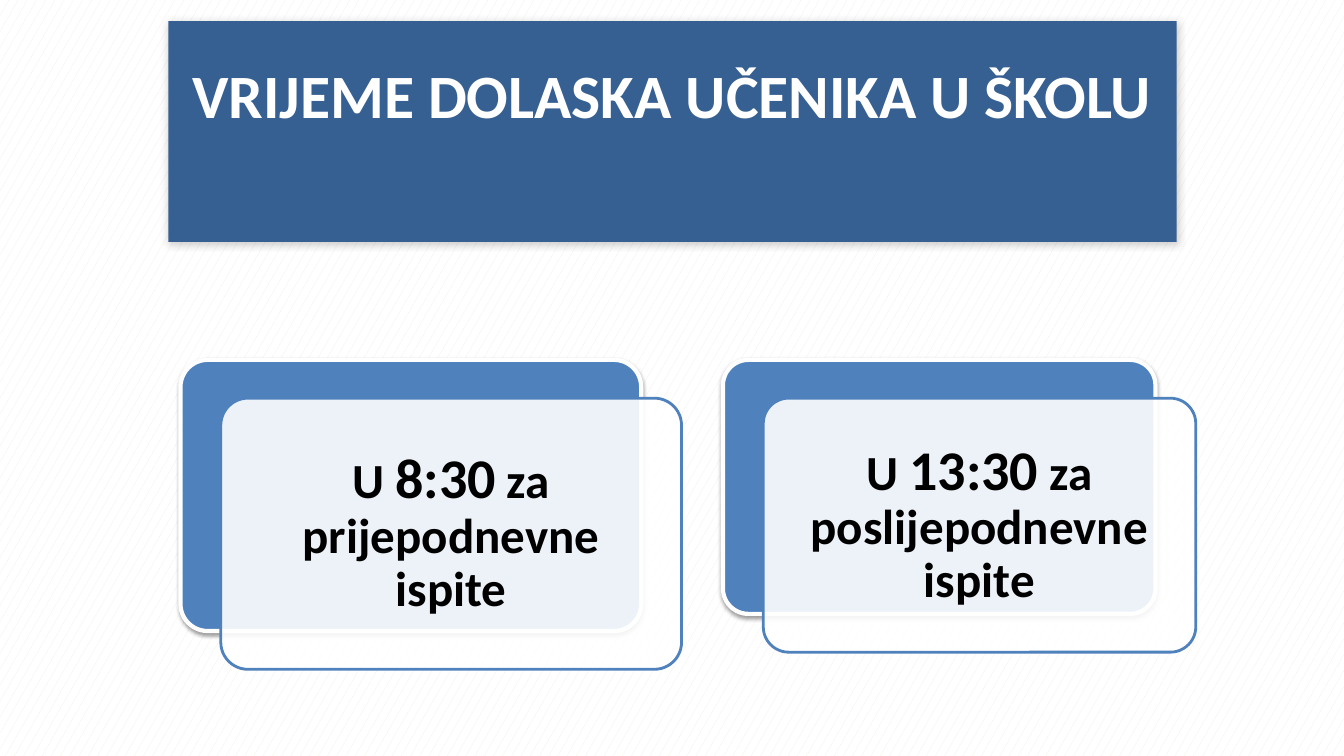
from lxml import etree
from pptx import Presentation
from pptx import util as u
from pptx.dml.color import RGBColor
from pptx.enum import dml, shapes, text
from pptx.oxml import ns

WHITE = RGBColor(0xFF, 0xFF, 0xFF)
BLACK = RGBColor(0x00, 0x00, 0x00)
CREAM = RGBColor(0xEE, 0xEC, 0xE1)
NAVY = RGBColor(0x37, 0x60, 0x92)
BLUE = RGBColor(0x4F, 0x81, 0xBD)

BANNER_SHADOW = dict(alpha=20, blur=6, dist=1, angle=45)
CARD_SHADOW = dict(alpha=38, blur=3.1, dist=1.6, angle=90)


def add_shadow(sp, alpha, blur, dist, angle):
    effects = sp._element.spPr.find(ns.qn("a:effectLst"))
    shadow = etree.SubElement(effects, ns.qn("a:outerShdw"), blurRad=str(u.Pt(blur)),
                              dist=str(u.Pt(dist)), dir=str(angle * 60000),
                              rotWithShape="0")
    color = etree.SubElement(shadow, ns.qn("a:srgbClr"), val=str(BLACK))
    etree.SubElement(color, ns.qn("a:alpha"), val=str(alpha * 1000))


def add_panel(parent, kind, box, fill, line=None, width=0, opacity=100, shadow=None):
    sp = parent.add_shape(kind, *map(u.Inches, box))
    sp.shadow.inherit = False
    sp.fill.solid()
    sp.fill.fore_color.rgb = fill
    if line is None:
        sp.line.fill.background()
    else:
        sp.line.color.rgb = line
        sp.line.width = u.Pt(width)
    if opacity < 100:
        color = sp._element.spPr.find(ns.qn("a:solidFill"))[0]
        etree.SubElement(color, ns.qn("a:alpha"), val=str(opacity * 1000))
    if shadow:
        add_shadow(sp, **shadow)
    return sp


def write_text(sp, runs, color, **frame_format):
    tf = sp.text_frame
    settings = dict(word_wrap=True, vertical_anchor=text.MSO_ANCHOR.MIDDLE)
    for name, value in {**settings, **frame_format}.items():
        setattr(tf, name, value)
    p = tf.paragraphs[0]
    p.alignment = text.PP_ALIGN.CENTER
    for words, size in runs:
        r = p.add_run()
        r.text = words
        for name, value in dict(name="Calibri", size=u.Pt(size), bold=True).items():
            setattr(r.font, name, value)
        r.font.color.rgb = color
    return p


def add_banner(slide, box, title):
    sp = add_panel(slide.shapes, shapes.MSO_SHAPE.RECTANGLE, box, NAVY,
                   shadow=BANNER_SHADOW)
    # The deep bottom margin lifts the title above the middle
    write_text(sp, [(title, 44)], WHITE, margin_bottom=u.Inches(0.79))


def add_time_card(slide, box, time, exams):
    left, top, width, height = box
    group = slide.shapes.add_group_shape().shapes
    rounded = shapes.MSO_SHAPE.ROUNDED_RECTANGLE

    # Solid card behind, translucent card in front
    back = add_panel(group, rounded, box, BLUE, WHITE, 3, shadow=CARD_SHADOW)
    left, top = left + 0.4, top + 0.38
    front = add_panel(group, rounded, (left, top, width, height), WHITE, BLUE, 2,
                      opacity=90)
    for sp in (back, front):
        sp.adjustments[0] = 0.1

    # Text inside the front card
    pad = 0.08
    label = group.add_textbox(*map(u.Inches, (left + pad, top + pad,
                                              width - 2 * pad, height - 2 * pad)))
    margins = {f"margin_{side}": u.Inches(0.15)
               for side in ("left", "top", "right", "bottom")}
    runs = [("U ", 35), (time, 40), (f" za {exams} ispite", 35)]
    p = write_text(label, runs, BLACK, **margins)
    p.line_spacing = 0.9


def main():
    prs = Presentation()
    prs.slide_width, prs.slide_height = u.Inches(13.33), u.Inches(7.5)
    slide = prs.slides.add_slide(prs.slide_layouts[6])

    # Background pattern
    fill = slide.background.fill
    fill.patterned()
    fill.pattern = dml.MSO_PATTERN.SMALL_CONFETTI
    fill.fore_color.rgb = CREAM
    fill.back_color.rgb = WHITE

    add_banner(slide, (1.67, 0.21, 10, 2.19), "VRIJEME DOLASKA UČENIKA U ŠKOLU")
    add_time_card(slide, (1.79, 3.57, 4.57, 2.69), "8:30", "prijepodnevne")
    add_time_card(slide, (7.17, 3.57, 4.29, 2.52), "13:30", "poslijepodnevne")
    prs.save("out.pptx")


if __name__ == "__main__":
    main()
